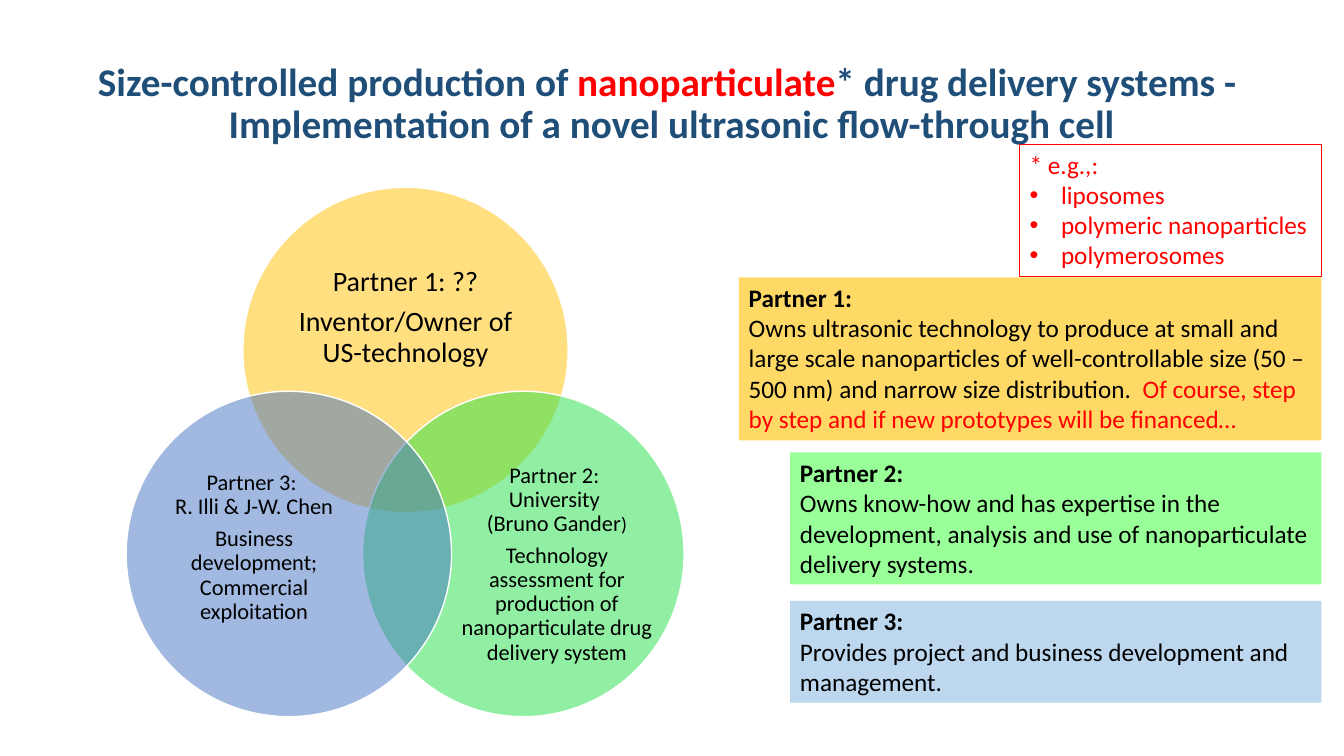
"""Build a slide on three partners in nanoparticulate drug delivery."""
from copy import deepcopy

from lxml import etree
from pptx import Presentation
from pptx import util as u
from pptx.dml.color import RGBColor
from pptx.enum import shapes, text
from pptx.oxml.ns import qn

RED, BLACK, WHITE, NAVY = "FF0000", "000000", "FFFFFF", "1F4E79"
RIGHT = 33.3


def rgb(code):
    return RGBColor.from_string(code)


def add_run(para, words, size=18, color=BLACK, bold=False, font="Calibri"):
    for i, line in enumerate(words.split("\n")):
        if i:
            para.add_line_break()
            para._p[-1].append(deepcopy(run._r.rPr))
        run = para.add_run()
        run.text = line
        run.font.name = font
        run.font.size = u.Pt(size)
        run.font.bold = bold
        run.font.color.rgb = rgb(color)


class Deck:
    def __init__(self, wide, high):
        self.prs = Presentation()
        self.prs.slide_width, self.prs.slide_height = u.Cm(wide), u.Cm(high)
        self.slide = self.prs.slides.add_slide(self.prs.slide_layouts[6])

    def circle(self, x, y, wide, high, color):
        disc = self.slide.shapes.add_shape(
            shapes.MSO_SHAPE.OVAL, *map(u.Cm, (x, y, wide, high)))
        disc.shadow.inherit = False
        disc.fill.solid()
        disc.fill.fore_color.rgb = rgb(color)
        tone = disc._element.spPr.find(qn("a:solidFill"))[0]
        etree.SubElement(tone, qn("a:alpha")).set("val", "50000")
        disc.line.color.rgb = rgb(WHITE)
        disc.line.width = u.Pt(1)

    def text(self, x, y, wide, high, paras, wrap=True, **style):
        """Add a text box; each paragraph is a list of (words, format) runs."""
        box = self.slide.shapes.add_textbox(*map(u.Cm, (x, y, wide, high)))
        frame = box.text_frame
        frame.word_wrap = wrap
        for i, runs in enumerate(paras):
            para = frame.paragraphs[0] if i == 0 else frame.add_paragraph()
            for words, form in runs:
                add_run(para, words, **{**style, **form})
        return box

    def title(self, x, y, wide, high, runs):
        box = self.text(x, y, wide, high, [runs], size=28, color=NAVY, bold=True)
        box.text_frame.vertical_anchor = text.MSO_ANCHOR.BOTTOM
        self.center(box)

    def center(self, box, gap=0):
        for para in box.text_frame.paragraphs:
            para.alignment = text.PP_ALIGN.CENTER
            para.line_spacing = 0.9
            para.space_after = u.Pt(gap)

    def label(self, x, y, wide, high, paras, size, low=0):
        box = self.text(x, y, wide, high, paras, size=size)
        frame = box.text_frame
        frame.vertical_anchor = text.MSO_ANCHOR.MIDDLE
        frame.margin_left = frame.margin_right = frame.margin_top = 0
        frame.margin_bottom = u.Cm(low)
        self.center(box, 0.35 * size)

    def panel(self, x, y, high, color, head, runs):
        box = self.text(x, y, RIGHT - x, high, [[(head, {"bold": True})], runs])
        box.text_frame.auto_size = text.MSO_AUTO_SIZE.SHAPE_TO_FIT_TEXT
        box.fill.solid()
        box.fill.fore_color.rgb = rgb(color)

    def note(self, x, y, high, head, items):
        paras = [[(line, {})] for line in [head, *items]]
        box = self.text(x, y, RIGHT - x, high, paras, wrap=False, color=RED)
        box.text_frame.auto_size = text.MSO_AUTO_SIZE.SHAPE_TO_FIT_TEXT
        box.line.color.rgb = rgb(RED)
        box.line.width = u.Pt(0.75)
        for para in box.text_frame.paragraphs[1:]:
            props = para._p.get_or_add_pPr()
            props.set("marL", str(u.Cm(0.79)))
            props.set("indent", str(-u.Cm(0.79)))
            etree.SubElement(props, qn("a:buFont")).set("typeface", "Arial")
            etree.SubElement(props, qn("a:buChar")).set("char", "•")


def main():
    deck = Deck(33.87, 19.05)
    deck.title(1.35, 1.02, 31.14, 2.82, [
        ("Size-controlled production of ", {}),
        ("nanoparticulate", {"color": RED}),
        ("* drug delivery systems - \n"
         "Implementation of a novel ultrasonic flow-through cell", {})])

    deck.circle(6.12, 4.72, 8.2, 8.2, "FFC000")
    deck.label(7.21, 6.17, 6.02, 3.68, [
        [("Partner 1: ??", {})],
        [("Inventor/Owner of US-technology", {})]], 20)
    deck.circle(9.14, 9.86, 8.1, 8.2, "23E148")
    deck.label(11.61, 11.96, 4.85, 4.52, [
        [("Partner 2: \nUniversity \n(Bruno Gander", {}), (")", {"size": 14})],
        [("Technology assessment for production of "
          "nanoparticulate drug delivery system", {})]], 16)
    deck.circle(3.18, 9.86, 8.2, 8.2, "4472C4")
    deck.label(3.94, 11.96, 4.93, 4.52, [
        [("Partner 3: \nR. Illi & J-W. Chen", {})],
        [("Business development; Commercial exploitation", {})]], 16, low=0.84)

    deck.note(25.7, 3.63, 3.33, "* e.g.,:",
              ["liposomes", "polymeric nanoparticles", "polymerosomes"])
    deck.panel(18.62, 6.99, 4.11, "FFD966", "Partner 1:", [
        ("Owns ultrasonic technology to produce at small and large scale "
         "nanoparticles of well-controllable size (50 – 500 nm) and narrow "
         "size distribution.", {}),
        ("  Of course, step by step and if new prototypes will be financed…",
         {"color": RED})])
    deck.panel(19.91, 11.4, 3.33, "99FF99", "Partner 2:", [
        ("Owns know-how and has expertise in the development, analysis and "
         "use of nanoparticulate delivery systems.", {})])
    deck.panel(19.91, 15.14, 2.57, "BDD7EE", "Partner 3:", [
        ("Provides project and business development and management.", {})])
    deck.prs.save("out.pptx")


if __name__ == "__main__":
    main()
